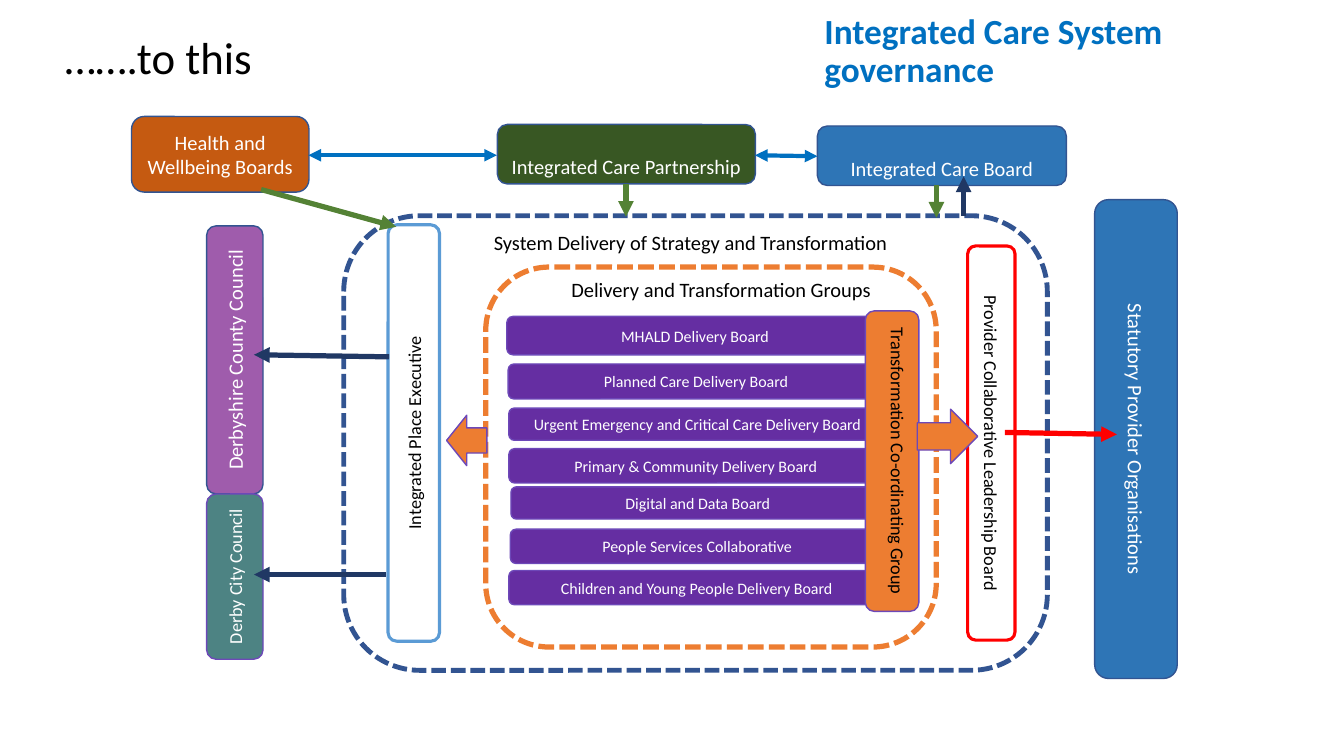
from lxml import etree
from pptx import Presentation
from pptx.dml.color import RGBColor
from pptx.enum.dml import MSO_LINE
from pptx.enum.shapes import MSO_CONNECTOR, MSO_SHAPE
from pptx.enum.text import MSO_ANCHOR, PP_ALIGN
from pptx.oxml.ns import qn
from pptx.util import Pt

ROUNDED, UP_ARROW = MSO_SHAPE.ROUNDED_RECTANGLE, MSO_SHAPE.UP_ARROW
STRAIGHT, DASH = MSO_CONNECTOR.STRAIGHT, MSO_LINE.SQUARE_DOT
MIDDLE, TOP = MSO_ANCHOR.MIDDLE, MSO_ANCHOR.TOP
CENTER, LEFT = PP_ALIGN.CENTER, PP_ALIGN.LEFT
FONT = "Calibri"
COLORS = {
    "white": "FFFFFF", "black": "000000", "purple": "652EA2", "violet": "6D48B8",
    "orange": "ED7D31", "navy": "325491", "dark navy": "203864", "blue": "2E75B6",
    "light blue": "5B9BD5", "bright blue": "0070C0", "red": "FF0000",
    "dark green": "385723", "green": "548235", "mauve": "9F5CAC",
    "teal": "4D8383", "rust": "C55A11",
}

# Content: every frame is left, top, width, height as seen on the page
DELIVERY_BOARDS = [
    ("MHALD Delivery Board", (362, 226, 269, 27.5)),
    ("Planned Care Delivery Board", (363, 260, 268.5, 25)),
    ("Urgent Emergency and Critical Care Delivery Board", (363.5, 291.5, 269.5, 23)),
    ("Primary & Community Delivery Board", (363.5, 320.5, 267, 24.5)),
    ("Digital and Data Board", (365, 347.75, 267, 23)),
    ("People Services Collaborative", (364.5, 378, 267, 24.5)),
    ("Children and Young People Delivery Board", (363.5, 407.5, 268.5, 24.5)),
]
# text, frame, turn, fill, line, line width, text colour, size, (top, bottom) inset
BODIES = [
    ("Provider Collaborative Leadership Board", (691.2, 175.7, 33.8, 281.5), 90,
     None, "red", 2.25, "black", 13, (3.6, 3.6)),
    ("Integrated Place Executive", (277.2, 160.6, 36.7, 297.4), 270,
     None, "light blue", 2.25, "black", 13, (3.6, 3.6)),
    ("Transformation Co-ordinating Group", (618.1, 222.1, 38.2, 214.6), 90,
     "orange", "violet", 1, "black", 13, (3.6, 12)),
    ("Statutory Provider Organisations", (781.9, 142.6, 59, 342), 90,
     "blue", "navy", 1, "white", 14.6, (3.6, 3.6)),
    ("Integrated Care Partnership", (355.3, 88.9, 184.3, 42.5), 0,
     "dark green", "navy", 1, "white", 14.6, (18, 0)),
    ("Derbyshire County Council", (147.6, 161.3, 40.3, 191.5), 270,
     "mauve", "navy", 1, "white", 14.6, (3.6, 3.6)),
    ("Derby City Council", (147.6, 352.8, 40.3, 118.1), 270,
     "teal", "violet", 1, "white", 13, (3.6, 3.6)),
    ("Health and Wellbeing Boards", (94, 83.2, 126.7, 54), 0,
     "rust", "navy", 1, "white", 14.6, (3.6, 3.6)),
    ("Integrated Care Board", (583.9, 90, 177.8, 42.5), 0,
     "blue", "navy", 1, "white", 14.6, (18, 0)),
]
# frame, line, line width
DASHED_FRAMES = [
    ((347, 190.8, 321.8, 271.4), "orange", 3.75),
    ((245.5, 154.1, 502.6, 324.7), "navy", 3.5),
]
# frame, turn
BLOCK_ARROWS = [((655.2, 292.3, 43.2, 38.9), 90), ((319, 296.6, 28.8, 36), 270)]
# start, end, colour, width, double-headed
ARROWS = [
    ((539.3, 110.9), (583.9, 111.6), "bright blue", 3, True),
    ((220.3, 110.9), (355, 110.9), "bright blue", 3, True),
    ((717.8, 308.9), (797.8, 310.3), "red", 3.75, False),
    ((447.1, 131.8), (447.1, 154.8), "green", 3.75, False),
    ((668.9, 132.5), (668.9, 155.5), "green", 3.75, False),
    ((186.5, 135.4), (283, 162), "green", 3.75, False),
    ((688.3, 154.1), (688.3, 126), "dark navy", 3.75, False),
    ((277.9, 254.9), (181.4, 253.4), "dark navy", 3.75, False),
    ((275.8, 410.4), (181.4, 410.4), "dark navy", 3.75, False),
]
# text, frame, size, colour, bold, anchor, (left, right) inset, wrap, line spacing
LABELS = [
    ("System Delivery of Strategy and Transformation", (345.6, 160.6, 329.8, 25.2),
     14.6, "black", False, TOP, (7.2, 7.2), True, 1),
    ("Delivery and Transformation Groups", (401, 194.4, 248.4, 25.2),
     14.6, "black", False, TOP, (7.2, 7.2), True, 1),
    ("Integrated Care System governance", (581.8, 18, 370, 38.9),
     25.2, "bright blue", True, MIDDLE, (7.2, 40), True, 0.9),
    ("…….to this", (35.3, 18, 154.1, 46.1),
     32, "black", False, TOP, (11, 7.2), False, 1),
]


def rgb(name):
    return RGBColor.from_string(COLORS[name])


def write(shape, text, size, color, bold=False, align=CENTER, anchor=MIDDLE,
          sides=(3.6, 3.6), ends=(3.6, 3.6), wrap=True, spacing=1):
    frame = shape.text_frame
    frame.word_wrap = wrap
    frame.vertical_anchor = anchor
    frame.margin_left, frame.margin_right = map(Pt, sides)
    frame.margin_top, frame.margin_bottom = map(Pt, ends)
    para = frame.paragraphs[0]
    para.alignment, para.line_spacing = align, spacing
    span = para.add_run()
    span.text = text
    span.font.name, span.font.size, span.font.bold = FONT, Pt(size), bold
    span.font.color.rgb = rgb(color)


def add_block(page, kind, frame, turn, fill, line, width):
    left, top, wide, high = frame
    if turn:  # a quarter turn swaps the sides about the same centre
        left, top = left + (wide - high) / 2, top + (high - wide) / 2
        wide, high = high, wide
    block = page.shapes.add_shape(kind, Pt(left), Pt(top), Pt(wide), Pt(high))
    block.rotation = turn
    block.shadow.inherit = False
    if fill:
        block.fill.solid()
        block.fill.fore_color.rgb = rgb(fill)
    else:
        block.fill.background()
    block.line.color.rgb = rgb(line)
    block.line.width = Pt(width)
    return block


def add_arrow(page, start, end, color, width, double):
    arrow = page.shapes.add_connector(STRAIGHT, *map(Pt, start + end))
    arrow.line.color.rgb = rgb(color)
    arrow.line.width = Pt(width)
    line = arrow.line._get_or_add_ln()
    for tag in ("a:headEnd", "a:tailEnd") if double else ("a:tailEnd",):
        etree.SubElement(line, qn(tag), type="triangle")
    etree.SubElement(arrow._element.spPr, qn("a:effectLst"))


def main():
    deck = Presentation()
    deck.slide_width, deck.slide_height = Pt(960), Pt(540)
    page = deck.slides.add_slide(deck.slide_layouts[6])

    # Delivery boards, behind the co-ordinating group
    for text, frame in DELIVERY_BOARDS:
        board = add_block(page, ROUNDED, frame, 0, "purple", "violet", 1)
        write(board, text, 11.4, "white")

    # Governance bodies
    for text, frame, turn, fill, line, width, color, size, ends in BODIES:
        body = add_block(page, ROUNDED, frame, turn, fill, line, width)
        write(body, text, size, color, ends=ends)

    # Dashed outlines and block arrows
    for frame, line, width in DASHED_FRAMES:
        outline = add_block(page, ROUNDED, frame, 0, None, line, width)
        outline.line.dash_style = DASH
    for frame, turn in BLOCK_ARROWS:
        add_block(page, UP_ARROW, frame, turn, "orange", "violet", 1)

    # Reporting lines
    for arrow in ARROWS:
        add_arrow(page, *arrow)

    # Headings and group labels
    for text, frame, size, color, bold, anchor, sides, wrap, spacing in LABELS:
        box = page.shapes.add_textbox(*map(Pt, frame))
        write(box, text, size, color, bold, LEFT, anchor, sides, wrap=wrap, spacing=spacing)

    deck.save("out.pptx")


if __name__ == "__main__":
    main()
